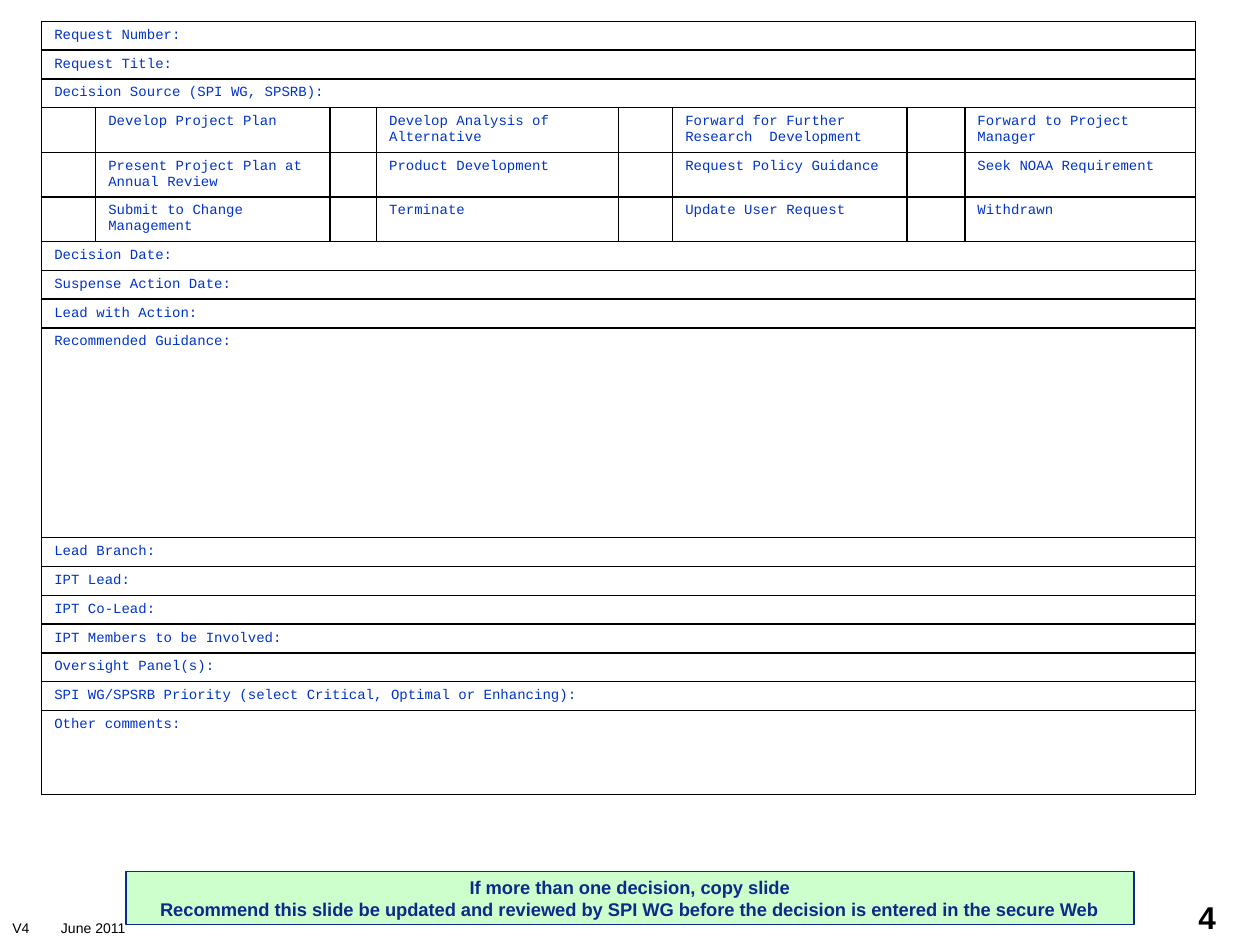
from lxml import etree
from pptx import Presentation
from pptx import util as u
from pptx.dml.color import RGBColor
from pptx.enum import shapes, text
from pptx.oxml import ns

BLACK = RGBColor(0, 0, 0)
ENTRY_BLUE = RGBColor(0x00, 0x33, 0xCC)
NAVY = RGBColor(0x0C, 0x2A, 0x8C)
PALE_GREEN = RGBColor(0xCC, 0xFF, 0xCC)

COLUMN_WIDTHS = [1.09, 4.72, 0.94, 4.88, 1.09, 4.72, 1.17, 4.65]
LINE_HEIGHT = 0.58
OPTION_HEIGHT = 0.9
TALL_ROWS = {"Recommended Guidance:": 4.23, "Other comments:": 1.7}

# A string is a full-width row; a list is a row of options with tick cells
FORM_ROWS = [
    "Request Number:",
    "Request Title:",
    "Decision Source (SPI WG, SPSRB):",
    ["Develop Project Plan", "Develop Analysis of Alternative",
     "Forward for Further Research  Development", "Forward to Project Manager"],
    ["Present Project Plan at Annual Review", "Product Development",
     "Request Policy Guidance", "Seek NOAA Requirement"],
    ["Submit to Change Management", "Terminate",
     "Update User Request", "Withdrawn"],
    "Decision Date:",
    "Suspense Action Date:",
    "Lead with Action:",
    "Recommended Guidance:",
    "Lead Branch:",
    "IPT Lead:",
    "IPT Co-Lead:",
    "IPT Members to be Involved:",
    "Oversight Panel(s):",
    "SPI WG/SPSRB Priority (select Critical, Optimal or Enhancing):",
    "Other comments:",
]


def write(frame, content, size=8, font="Arial", color=BLACK, bold=False,
          align=text.PP_ALIGN.LEFT, tab=None):
    """Write one paragraph for each line of content."""
    for index, line in enumerate(content.split("\n")):
        para = frame.add_paragraph() if index else frame.paragraphs[0]
        para.alignment = align
        if tab is not None:
            stops = etree.SubElement(para._p.get_or_add_pPr(), ns.qn("a:tabLst"))
            etree.SubElement(stops, ns.qn("a:tab"), pos=str(int(tab)), algn="l")
        if not line:
            # An empty cell takes its line height from the end mark
            etree.SubElement(para._p, ns.qn("a:endParaRPr"), sz=str(size * 100))
            continue
        span = para.add_run()
        span.text = line
        span.font.size = u.Pt(size)
        span.font.name = font
        span.font.bold = bold
        span.font.color.rgb = color


def add_label(page, content, left, top, width, height, **style):
    box = page.shapes.add_textbox(u.Cm(left), u.Cm(top), u.Cm(width), u.Cm(height))
    box.text_frame.word_wrap = True
    write(box.text_frame, content, **style)


def add_note(page, content, left, top, width, height):
    box = page.shapes.add_shape(shapes.MSO_SHAPE.RECTANGLE,
                                u.Cm(left), u.Cm(top), u.Cm(width), u.Cm(height))
    box.shadow.inherit = False
    box.fill.solid()
    box.fill.fore_color.rgb = PALE_GREEN
    box.line.color.rgb = NAVY
    box.line.width = u.Pt(0.75)
    box.text_frame.word_wrap = False
    box.text_frame.vertical_anchor = text.MSO_ANCHOR.MIDDLE
    write(box.text_frame, content, size=10.5, color=NAVY, bold=True,
          align=text.PP_ALIGN.CENTER)


def style_cell(cell):
    properties = cell._tc.get_or_add_tcPr()
    for side in ("lnL", "lnR", "lnT", "lnB"):
        border = etree.SubElement(properties, ns.qn("a:" + side), w=str(int(u.Pt(1))))
        fill = etree.SubElement(border, ns.qn("a:solidFill"))
        etree.SubElement(fill, ns.qn("a:srgbClr"), val=str(BLACK))
    cell.fill.background()


def row_height(entry):
    if isinstance(entry, list):
        return OPTION_HEIGHT
    return TALL_ROWS.get(entry, LINE_HEIGHT)


def add_form(page, left, top):
    heights = [row_height(entry) for entry in FORM_ROWS]
    form = page.shapes.add_table(
        len(FORM_ROWS), len(COLUMN_WIDTHS), u.Cm(left), u.Cm(top),
        u.Cm(sum(COLUMN_WIDTHS)), u.Cm(sum(heights))).table
    form.first_row = False
    form.horz_banding = False
    for column, width in zip(form.columns, COLUMN_WIDTHS):
        column.width = u.Cm(width)

    last = len(COLUMN_WIDTHS) - 1
    for index, (entry, height) in enumerate(zip(FORM_ROWS, heights)):
        form.rows[index].height = u.Cm(height)
        if isinstance(entry, list):
            contents = [part for option in entry for part in ("", option)]
        else:
            contents = [entry] + [""] * last
            form.cell(index, 0).merge(form.cell(index, last))
        for cell, content in zip(form.rows[index].cells, contents):
            style_cell(cell)
            write(cell.text_frame, content, font="Courier New", color=ENTRY_BLUE)


def main():
    deck = Presentation()
    deck.slide_width, deck.slide_height = u.Cm(25.4), u.Cm(19.05)
    page = deck.slides.add_slide(deck.slide_layouts[6])

    # Decision form
    add_form(page, 0.84, 0.43)

    # Instruction to the editor
    add_note(page, "If more than one decision, copy slide\n"
             "Recommend this slide be updated and reviewed by SPI WG "
             "before the decision is entered in the secure Web",
             2.54, 17.57, 20.32, 1.07)

    # Footer: version, date and page number
    add_label(page, "V4\tJune 2011", 0, 18.42, 8.05, 0.64, tab=u.Cm(0.98))
    add_label(page, "4", 19.48, 17.98, 5.28, 1.07, size=18, bold=True,
              align=text.PP_ALIGN.RIGHT)

    deck.save("out.pptx")


if __name__ == "__main__":
    main()
